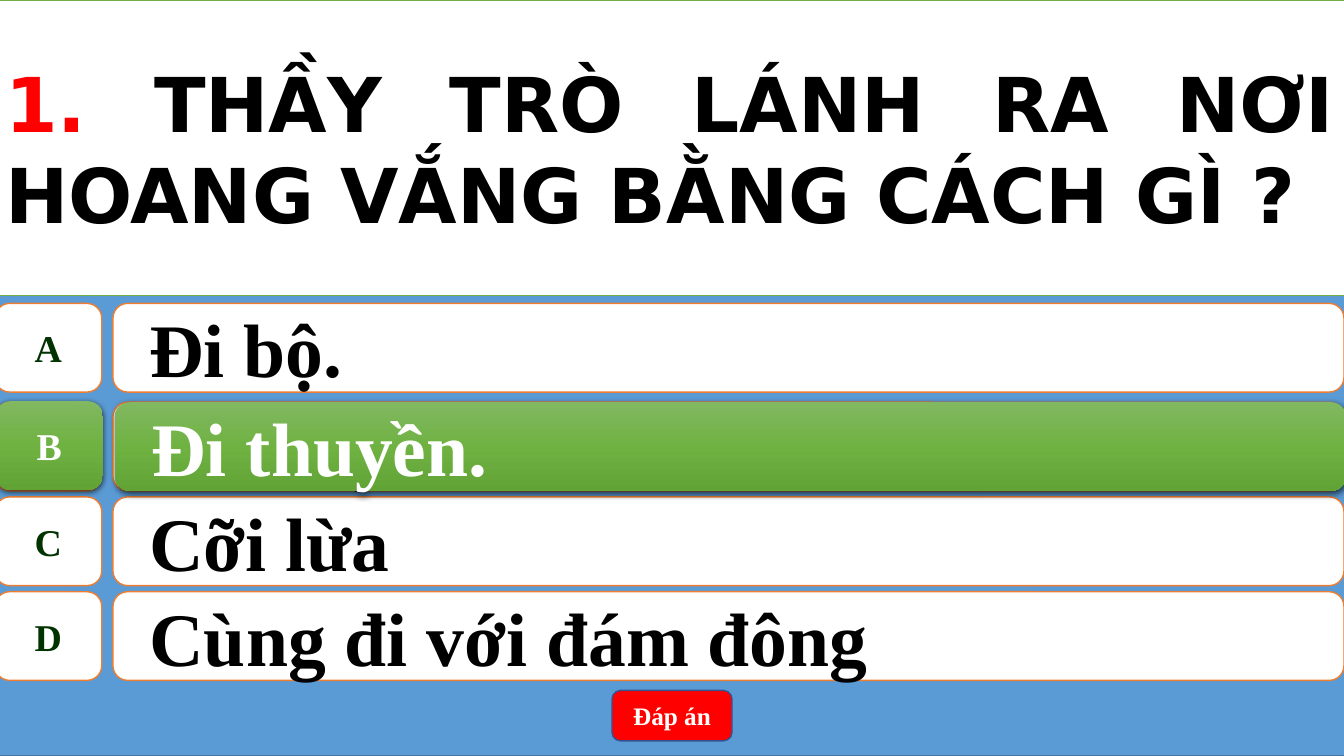
"""Build a quiz slide with a question, four answers and the correct one highlighted."""
from copy import deepcopy

from pptx import Presentation
from pptx.dml.color import RGBColor
from pptx.enum.shapes import MSO_SHAPE
from pptx.enum.text import MSO_ANCHOR, MSO_AUTO_SIZE, PP_ALIGN
from pptx.oxml import parse_xml
from pptx.oxml.ns import nsdecls, qn
from pptx.util import Inches, Pt

COLORS = {
    "blue": "5B9BD5", "blue_line": "43739E", "white": "FFFFFF", "black": "000000",
    "orange": "ED7D31", "dark_green": "003300", "green_line": "70AD47",
    "red": "FF0000", "button_line": "325491",
    "green_top": "81B861", "green_middle": "6FB242", "green_bottom": "62A336",
}
SERIF = "Times New Roman"
LETTER_FORMAT = {"name": SERIF, "size": Pt(27), "bold": True}
ANSWER_FORMAT = {"name": SERIF, "size": Pt(54), "bold": True}
BUTTON_FORMAT = {"name": SERIF, "size": Pt(18), "bold": True}
QUESTION_FORMAT = {"name": "DejaVu Sans", "size": Pt(54), "bold": True}
ANSWERS = [
    ("A", "Đi bộ.", 3.01),
    ("B", "Đi thuyền.", 3.99),
    ("C", "Cỡi lừa", 4.93),
    ("D", "Cùng đi với đám đông", 5.87),
]
ROW_HEIGHT = 0.88


def rgb(name):
    return RGBColor.from_string(COLORS[name])


def set_attributes(target, values):
    for name, value in values.items():
        setattr(target, name, value)


def paint(shape, fill, line):
    shape.fill.solid()
    shape.fill.fore_color.rgb = rgb(fill)
    shape.line.color.rgb = rgb(line)
    shape.line.width = Pt(1)


def paint_highlight(shape):
    shape.line.fill.background()
    shape.fill.gradient()
    shape.fill.gradient_angle = 270
    properties = shape._element.spPr
    stop_list = properties.find(qn("a:gradFill")).find(qn("a:gsLst"))
    stop_list.insert(1, deepcopy(stop_list[0]))
    names = ("green_top", "green_middle", "green_bottom")
    for stop, name, position in zip(shape.fill.gradient_stops, names, (0, 0.5, 1)):
        stop.color.rgb = rgb(name)
        stop.position = position
    properties.find(qn("a:effectLst")).append(parse_xml(
        f'<a:outerShdw {nsdecls("a")} blurRad="57150" dist="19050" dir="5400000" '
        f'algn="ctr" rotWithShape="0"><a:srgbClr val="{COLORS["black"]}">'
        '<a:alpha val="63000"/></a:srgbClr></a:outerShdw>'))


def add_box(slide, kind, left, top, width, height):
    shape = slide.shapes.add_shape(
        kind, Inches(left), Inches(top), Inches(width), Inches(height))
    shape.shadow.inherit = False
    return shape


def add_run(paragraph, text, font_format, color):
    run = paragraph.add_run()
    run.text = text
    set_attributes(run.font, font_format)
    run.font.color.rgb = rgb(color)


def write(shape, text, font_format, color, align=PP_ALIGN.CENTER, wrap=True):
    set_attributes(shape.text_frame,
                   {"vertical_anchor": MSO_ANCHOR.MIDDLE, "word_wrap": wrap})
    paragraph = shape.text_frame.paragraphs[0]
    paragraph.alignment = align
    add_run(paragraph, text, font_format, color)
    return paragraph


def add_answer(slide, letter, answer, letter_at, answer_at, highlight=False):
    letter_box = add_box(slide, MSO_SHAPE.FLOWCHART_ALTERNATE_PROCESS,
                         *letter_at, 1.06, ROW_HEIGHT)
    answer_box = add_box(slide, MSO_SHAPE.ROUNDED_RECTANGLE,
                         *answer_at, 12.21, ROW_HEIGHT)
    for box in (letter_box, answer_box):
        if highlight:
            paint_highlight(box)
        else:
            paint(box, "white", "orange")
    write(letter_box, letter, LETTER_FORMAT,
          "white" if highlight else "dark_green", wrap=False)
    paragraph = write(answer_box, answer, ANSWER_FORMAT,
                      "white" if highlight else "black", PP_ALIGN.LEFT)
    paragraph.level = 1
    set_attributes(paragraph._p.get_or_add_pPr(), {})
    for name, length in {"marL": 0.5, "indent": -0.28}.items():
        paragraph._p.get_or_add_pPr().set(name, str(Inches(length)))


def add_button(slide):
    button = add_box(slide, MSO_SHAPE.ROUNDED_RECTANGLE, 6.07, 6.85, 1.19, 0.5)
    paint(button, "red", "button_line")
    write(button, "Đáp án", BUTTON_FORMAT, "white")


def place_question(slide):
    title = slide.shapes.title
    set_attributes(title, {"left": Inches(-0.05), "top": Inches(0),
                           "width": Inches(13.39), "height": Inches(2.93)})
    paint(title, "white", "green_line")
    title.text_frame.auto_size = MSO_AUTO_SIZE.NONE
    paragraph = write(title, "1. ", QUESTION_FORMAT, "red", PP_ALIGN.JUSTIFY)
    add_run(paragraph, "THẦY TRÒ LÁNH RA NƠI HOANG VẮNG BẰNG CÁCH GÌ ?",
            QUESTION_FORMAT, "black")
    slide.shapes._spTree.append(title._element)


def main():
    presentation = Presentation()
    set_attributes(presentation, {"slide_width": Inches(13.33),
                                  "slide_height": Inches(7.5)})
    slide = presentation.slides.add_slide(presentation.slide_layouts[5])
    backdrop = add_box(slide, MSO_SHAPE.RECTANGLE, -0.05, 0, 13.39, 7.5)
    paint(backdrop, "blue", "blue_line")
    for letter, answer, top in ANSWERS:
        add_answer(slide, letter, answer, (-0.05, top), (1.12, top))
    add_button(slide)
    letter, answer, top = ANSWERS[1]
    add_answer(slide, letter, answer, (-0.04, top - 0.01), (1.14, top), highlight=True)
    place_question(slide)
    presentation.save("out.pptx")


if __name__ == "__main__":
    main()
